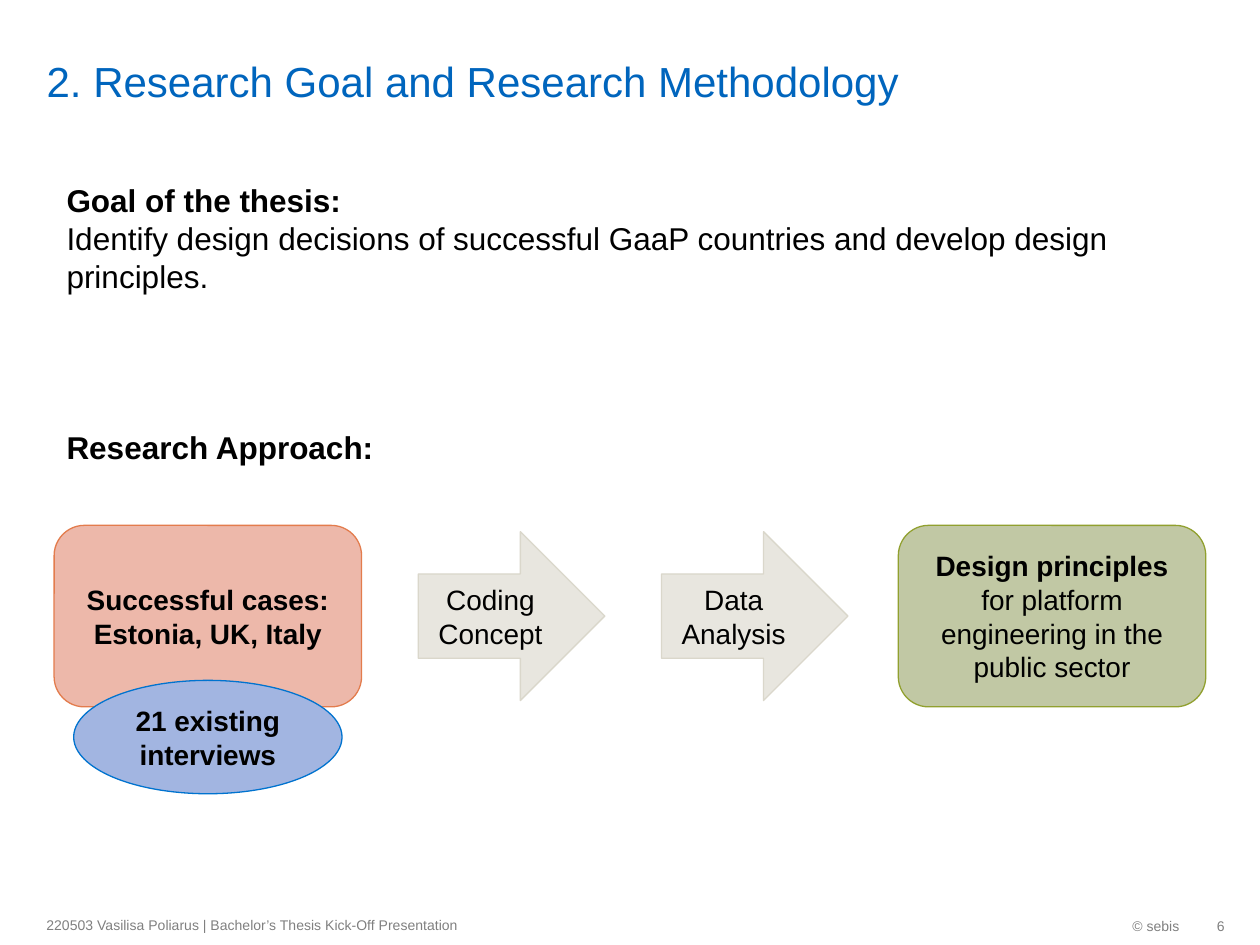
from pptx import Presentation
from pptx.dml.color import RGBColor
from pptx.enum.shapes import MSO_SHAPE as Shape
from pptx.enum.text import MSO_ANCHOR as Anchor, MSO_AUTO_SIZE as AutoSize, PP_ALIGN as Align
from pptx.util import Inches, Pt

COLORS = {
    "title": "0065BD", "text": "000000", "footer": "808080",
    "cases": "EDB8AA", "cases_line": "E37C4D",
    "principles": "C1C8A4", "principles_line": "91A02F",
    "interviews": "A2B5E1", "interviews_line": "0073CF",
    "step": "E8E6DF", "step_line": "DAD7CB",
}
TITLE = "2. Research Goal and Research Methodology"
GOAL = [
    [("Goal of the thesis:", True)],
    [("Identify design decisions of successful GaaP countries and develop design principles.", False)],
]
APPROACH = [[("Research Approach:", True)]]
CASES = [[("Successful cases:", True)], [("Estonia, UK, Italy", True)]]
PRINCIPLES = [[("Design principles", True), (" for platform engineering in the public sector", False)]]
INTERVIEWS = [[("21 existing interviews", True)]]
STEPS = ["Coding Concept", "Data Analysis"]
FOOTERS = [
    ("220503 Vasilisa Poliarus | Bachelor’s Thesis Kick-Off Presentation", (0.27, 7.18, 4.73, 0.32), Align.LEFT, 0.1),
    ("© sebis", (7.7, 7.19, 1.76, 0.32), Align.RIGHT, 0.1),
    ("6", (9.45, 7.19, 0.27, 0.32), Align.RIGHT, 0),
]

MARGIN = 0.43
CARD_W, CARD_H = 2.44, 1.44
ROW_MIDDLE = 4.89
STEP_W, STEP_H = 1.48, 1.34
STEP_LEFT, STEP_PITCH = 3.32, 1.93
OVAL_W, OVAL_H = 2.13, 0.9


def color(name):
    return RGBColor.from_string(COLORS[name])


def write(holder, paragraphs, size=16, ink="text", align=Align.CENTER,
          anchor=Anchor.MIDDLE, wrap=True, right=0.1, inset_y=0.05):
    frame = holder.text_frame
    frame.auto_size = AutoSize.NONE
    frame.word_wrap = wrap
    frame.vertical_anchor = anchor
    frame.margin_left, frame.margin_right = Inches(0.1), Inches(right)
    frame.margin_top = frame.margin_bottom = Inches(inset_y)
    for index, runs in enumerate(paragraphs):
        paragraph = frame.add_paragraph() if index else frame.paragraphs[0]
        paragraph.alignment = align
        for text, bold in runs:
            run = paragraph.add_run()
            run.text = text
            run.font.name = "Arial"
            run.font.size = Pt(size)
            run.font.bold = bold
            run.font.color.rgb = color(ink)


def add_label(slide, box, paragraphs, **style):
    label = slide.shapes.add_textbox(*map(Inches, box))
    write(label, paragraphs, **style)


def add_node(slide, kind, box, paragraphs, fill):
    node = slide.shapes.add_shape(kind, *map(Inches, box))
    node.shadow.inherit = False
    node.fill.solid()
    node.fill.fore_color.rgb = color(fill)
    node.line.color.rgb = color(fill + "_line")
    node.line.width = Pt(0.75)
    write(node, paragraphs)


def main():
    deck = Presentation()
    deck.slide_width, deck.slide_height = Inches(10), Inches(7.5)
    slide = deck.slides.add_slide(deck.slide_layouts[5])

    title = slide.shapes.title
    title.left, title.top, title.width, title.height = map(Inches, (0.27, 0.05, 8.24, 0.79))
    write(title, [[(TITLE, False)]], size=24, ink="title", align=Align.LEFT,
          anchor=Anchor.BOTTOM, inset_y=0)

    for text, box, align, right in FOOTERS:
        add_label(slide, box, [[(text, False)]], size=8, ink="footer", align=align, right=right)

    heading = {"size": 18, "align": Align.LEFT, "anchor": Anchor.TOP}
    add_label(slide, (MARGIN, 1.39, 8.74, 1.31), GOAL, **heading)
    add_label(slide, (MARGIN, 3.35, 2.66, 0.4), APPROACH, wrap=False, **heading)

    card_top = ROW_MIDDLE - CARD_H / 2
    cards = [(MARGIN, CASES, "cases"), (10 - MARGIN - CARD_W, PRINCIPLES, "principles")]
    for left, paragraphs, fill in cards:
        add_node(slide, Shape.ROUNDED_RECTANGLE, (left, card_top, CARD_W, CARD_H), paragraphs, fill)

    oval_left = MARGIN + (CARD_W - OVAL_W) / 2
    add_node(slide, Shape.OVAL, (oval_left, 5.4, OVAL_W, OVAL_H), INTERVIEWS, "interviews")

    for index, step in enumerate(STEPS):
        box = (STEP_LEFT + index * STEP_PITCH, ROW_MIDDLE - STEP_H / 2, STEP_W, STEP_H)
        add_node(slide, Shape.RIGHT_ARROW, box, [[(step, False)]], "step")

    deck.save("out.pptx")


if __name__ == "__main__":
    main()
